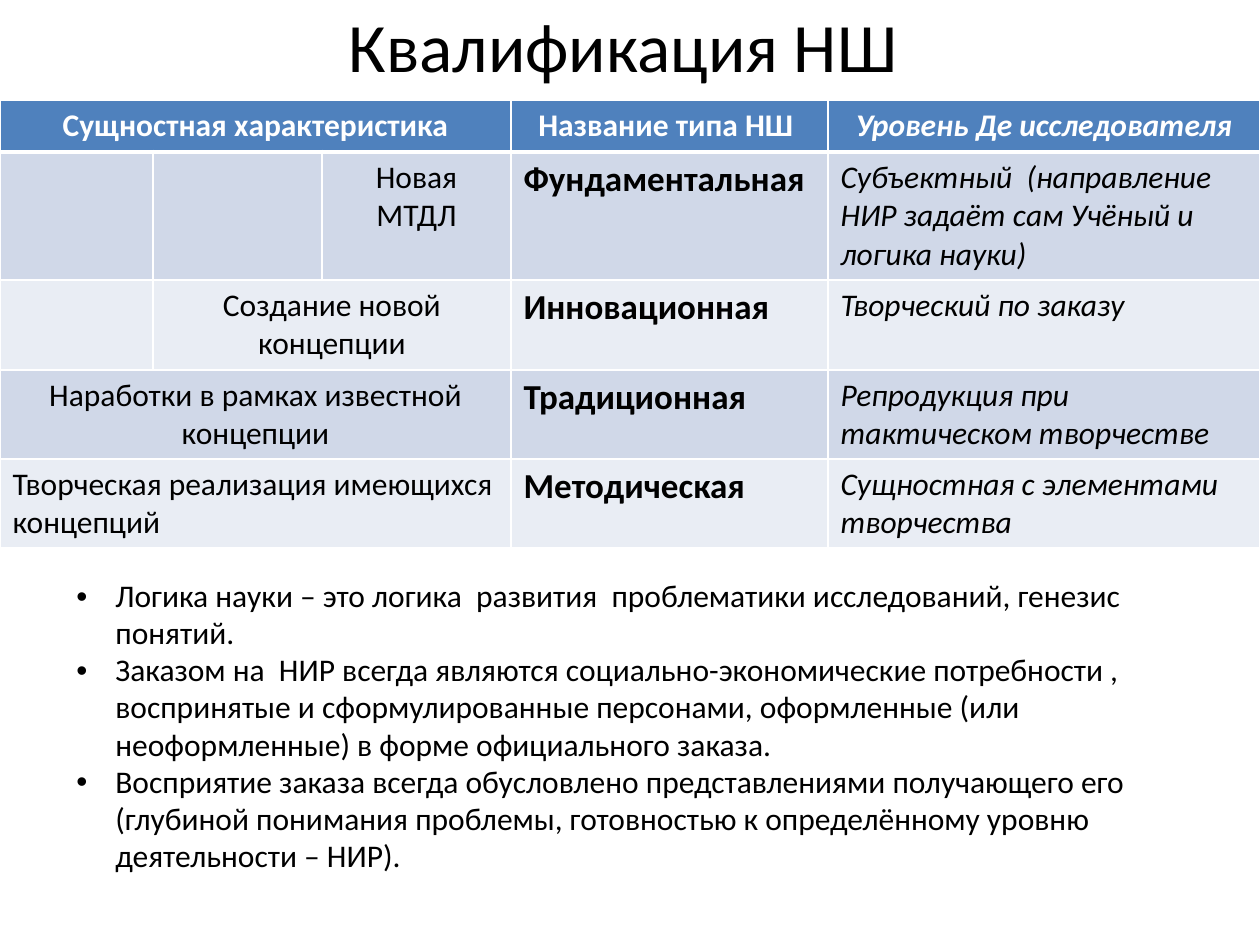
from dataclasses import dataclass

from lxml.etree import SubElement
from pptx import Presentation
from pptx.dml.color import RGBColor
from pptx.enum.text import MSO_ANCHOR, PP_ALIGN
from pptx.oxml.ns import qn
from pptx.util import Emu, Pt

EMU_PER_PX = 914400 / 126


@dataclass(frozen=True)
class Theme:
    font: str = "Calibri"
    black: str = "000000"
    white: str = "FFFFFF"
    header: str = "4F81BD"
    bands: tuple[str, str] = ("D0D8E8", "E9EDF4")
    title_pt: float = 39.6
    text_pt: float = 18
    type_pt: float = 20
    border_pt: float = 1
    header_rule_pt: float = 3


@dataclass(frozen=True)
class Box:
    x: int
    y: int
    w: int
    h: int


@dataclass(frozen=True)
class Entry:
    """Text of one cell, placed at a column and spanning some columns."""
    col: int
    text: str
    span: int = 1
    align: PP_ALIGN = PP_ALIGN.LEFT
    pt: float = 18
    bold: bool = False
    italic: bool = False


THEME = Theme()
TITLE = Box(64, 16, 1134, 58)
TABLE = Box(0, 100, 1260, 448)
NOTES = Box(64, 572, 1190, 318)
COLUMNS = (153, 169, 189, 317, 432)
ROWS = (52, 128, 90, 89, 89)
BULLET_INDENT = 39
CENTER = PP_ALIGN.CENTER

HEADER = (
    Entry(0, "Сущностная характеристика", 3, CENTER, bold=True),
    Entry(3, "Название типа НШ ", align=CENTER, bold=True),
    Entry(4, "Уровень Де исследователя", align=CENTER, bold=True, italic=True),
)


def type_row(trait: Entry, name: str, level: str) -> tuple[Entry, ...]:
    return (trait, Entry(3, name, pt=THEME.type_pt, bold=True),
            Entry(4, level, italic=True))


ENTRIES = (
    HEADER,
    type_row(Entry(2, "Новая МТДЛ", 1, CENTER), "Фундаментальная",
             "Субъектный  (направление НИР задаёт сам Учёный и логика науки)"),
    type_row(Entry(1, "Создание новой концепции", 2, CENTER), "Инновационная",
             "Творческий по заказу"),
    type_row(Entry(0, "Наработки в рамках известной концепции", 3, CENTER),
             "Традиционная", "Репродукция при тактическом творчестве"),
    type_row(Entry(0, "Творческая реализация имеющихся концепций", 3),
             "Методическая", "Сущностная с элементами творчества"),
)

NOTE_TEXTS = (
    "Логика науки – это логика  развития  проблематики исследований, "
    "генезис понятий.",
    "Заказом на  НИР всегда являются социально-экономические потребности , "
    "воспринятые и сформулированные персонами, оформленные (или "
    "неоформленные) в форме официального заказа.",
    "Восприятие заказа всегда обусловлено представлениями получающего его "
    "(глубиной понимания проблемы, готовностью к определённому уровню "
    "деятельности – НИР).",
)


def px(n: int) -> Emu:
    return Emu(round(n * EMU_PER_PX))


def place(box: Box) -> tuple[Emu, ...]:
    return px(box.x), px(box.y), px(box.w), px(box.h)


def format_runs(p, pt: float, color: str, bold: bool = False,
                italic: bool = False) -> None:
    for r in p.runs:
        r.font.name = THEME.font
        r.font.size = Pt(pt)
        r.font.bold = bold
        r.font.italic = italic
        r.font.color.rgb = RGBColor.from_string(color)


def add_text_frame(s, box: Box, text: str):
    tf = s.shapes.add_textbox(*place(box)).text_frame
    tf.word_wrap = True
    tf.text = text
    return tf


def add_title(s) -> None:
    tf = add_text_frame(s, TITLE, "Квалификация НШ ")
    tf.vertical_anchor = MSO_ANCHOR.MIDDLE
    p = tf.paragraphs[0]
    p.alignment = CENTER
    format_runs(p, THEME.title_pt, THEME.black)


def set_borders(cell, bottom_pt: float) -> None:
    tc_pr = cell._tc.get_or_add_tcPr()
    widths = dict.fromkeys(("lnL", "lnR", "lnT"), THEME.border_pt)
    for side, pt in (widths | {"lnB": bottom_pt}).items():
        ln = SubElement(tc_pr, qn(f"a:{side}"), w=str(Pt(pt)))
        fill = SubElement(ln, qn("a:solidFill"))
        SubElement(fill, qn("a:srgbClr"), val=THEME.white)


def fill_entry(table, row: int, entry: Entry) -> None:
    cell = table.cell(row, entry.col)
    if entry.span > 1:
        cell.merge(table.cell(row, entry.col + entry.span - 1))
    cell.text_frame.text = entry.text
    p = cell.text_frame.paragraphs[0]
    p.alignment = entry.align
    color = THEME.black if row else THEME.white
    format_runs(p, entry.pt, color, entry.bold, entry.italic)


def add_types_table(s) -> None:
    table = s.shapes.add_table(len(ROWS), len(COLUMNS), *place(TABLE)).table
    for column, width in zip(table.columns, COLUMNS):
        column.width = px(width)
    for i, (row, height) in enumerate(zip(table.rows, ROWS)):
        row.height = px(height)
        color = THEME.bands[(i - 1) % 2] if i else THEME.header
        for cell in row.cells:
            set_borders(cell, THEME.border_pt if i else THEME.header_rule_pt)
            cell.fill.solid()
            cell.fill.fore_color.rgb = RGBColor.from_string(color)
        for entry in ENTRIES[i]:
            fill_entry(table, i, entry)


def add_notes(s) -> None:
    tf = add_text_frame(s, NOTES, "\n".join(NOTE_TEXTS))
    for p in tf.paragraphs:
        p.line_spacing = 0.98
        p_pr = p._p.get_or_add_pPr()
        p_pr.set("marL", str(px(BULLET_INDENT)))
        p_pr.set("indent", str(-px(BULLET_INDENT)))
        SubElement(p_pr, qn("a:buFont"), typeface="Arial")
        SubElement(p_pr, qn("a:buChar"), char="•")
        format_runs(p, THEME.text_pt, THEME.black)


def main() -> None:
    prs = Presentation()
    prs.slide_width, prs.slide_height = px(1260), px(945)
    s = prs.slides.add_slide(prs.slide_layouts[6])
    add_title(s)
    add_types_table(s)
    add_notes(s)
    prs.save("out.pptx")


if __name__ == "__main__":
    main()
